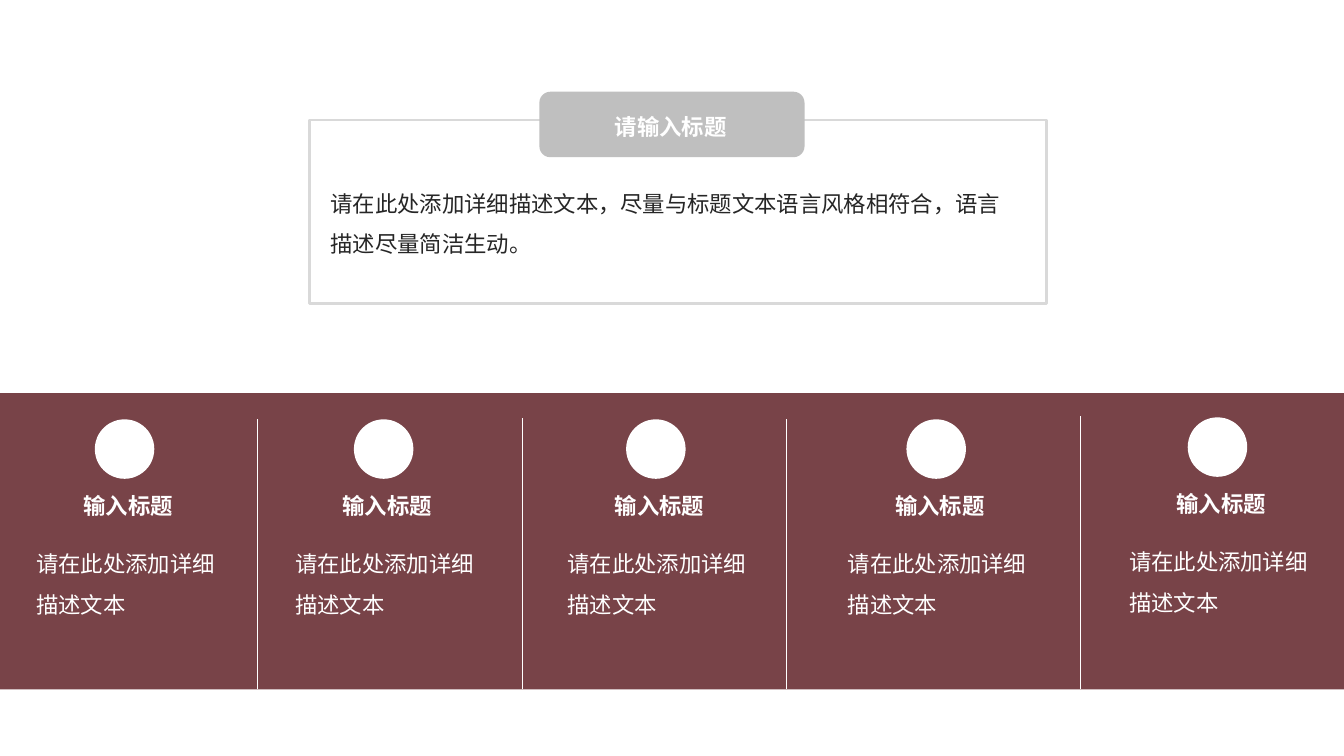
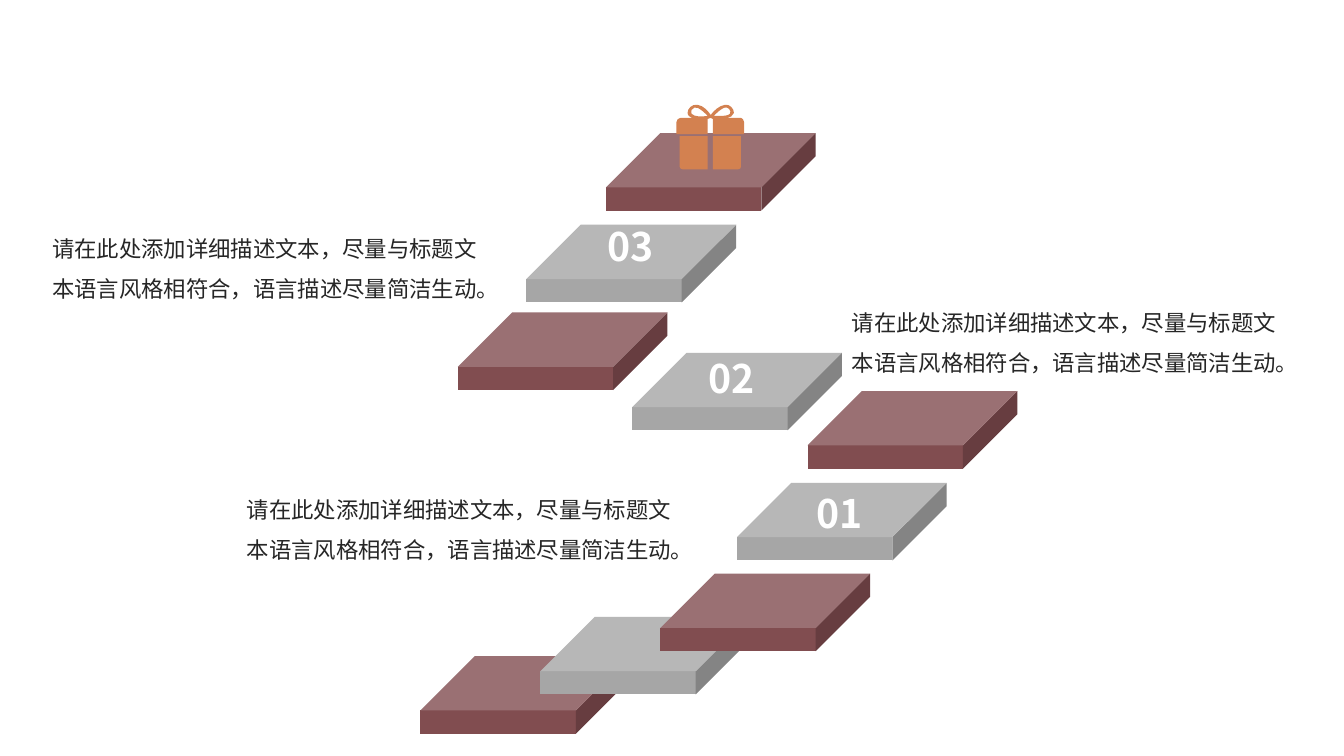
import pptx
import pptx.util
import pptx.dml.color
import pptx.enum.shapes
import pptx.enum.text
import pptx.oxml.ns
from lxml import etree

RGBColor = pptx.dml.color.RGBColor
SHAPE = pptx.enum.shapes.MSO_SHAPE
qn = pptx.oxml.ns.qn

# Shared look: 100 px to the inch
PX = 9144
SLIDE_SIZE = (1333, 750)
FONT = "Noto Sans CJK SC"
WHITE = RGBColor(0xFF, 0xFF, 0xFF)
DARK = RGBColor(0x26, 0x26, 0x26)
FRAME_GREY = RGBColor(0xD9, 0xD9, 0xD9)
TAB_GREY = RGBColor(0xBF, 0xBF, 0xBF)
STEP_GREY = RGBColor(0xA6, 0xA6, 0xA6)
STEP_RED = RGBColor(0x81, 0x4D, 0x50)
BAND_RED = RGBColor(0x78, 0x43, 0x48)
GIFT_ORANGE = RGBColor(0xD3, 0x81, 0x50)

BODY = {"size": pptx.util.Pt(16), "name": FONT}
HEADING = {**BODY, "bold": True}
NUMBER = {**HEADING, "size": pptx.util.Pt(28)}
BODY_SPACING = 1.5
BODY_HEIGHT = 86
HEADING_HEIGHT = 37

# Slide 1 content
DESCRIPTION = "请在此处添加详细描述文本，尽量与标题文本语言风格相符合，语言描述尽量简洁生动。"
FRAME_TITLE = "请输入标题"
COLUMN_TITLE = "输入标题"
COLUMN_TEXT = "请在此处添加详细描述文本"
FRAME = (307, 119, 731, 182)
FRAME_TAB = (535, 91, 263, 65)
BAND = (0, 390, 1333, 294)
COLUMNS = [(26, 416), (283, 416), (553, 416), (831, 416), (1110, 414)]  # left, top
DIVIDERS = [(255, 416), (518, 415), (780, 416), (1072, 413)]  # x, top

# Slide 2 content: steps from the bottom up, colours alternate
STEP_SIZE = (208, 77)
STEP_DEPTH = 0.7
STEPS = [(417, 651), (536, 612), (655, 569), (731, 479), (801, 388),
         (627, 350), (454, 310), (522, 223), (601, 132)]
NOTES = [(42, 215), (835, 288), (235, 474)]
NUMBERS = [("03", 593, 216), ("02", 693, 347), ("01", 800, 481)]

# Gift outline: each contour is a start point, then lines (2 values) or curves (6)
GIFT = [
    # lid and bow
    [(707, 133), (707, 118), (706, 118, 706, 117, 705, 117),
     (704, 118, 703, 118, 702, 118), (702, 133), (671, 133), (671, 121),
     (671, 119, 673, 117, 675, 117), (689, 117),
     (685, 117, 682, 115, 682, 112), (682, 108, 686, 103, 692, 104),
     (698, 105, 702, 110, 705, 114), (708, 110, 713, 105, 719, 104),
     (724, 103, 728, 108, 728, 112), (727, 115, 724, 117, 721, 117),
     (735, 117), (736, 117, 738, 119, 738, 121), (738, 133)],
    # loops of the bow
    [(692, 107), (689, 106, 688, 107, 686, 109), (686, 110, 685, 112, 686, 113),
     (689, 116, 696, 116, 702, 115), (699, 112, 696, 109, 692, 107)],
    [(724, 113), (726, 110, 722, 105, 718, 107), (714, 109, 711, 112, 708, 115),
     (710, 115, 713, 115, 715, 115), (717, 115, 722, 115, 724, 113)],
    # halves of the box
    [(702, 168), (677, 168), (676, 168, 674, 167, 674, 165), (674, 135), (702, 135)],
    [(735, 165), (735, 167, 734, 168, 732, 168), (707, 168), (707, 135), (735, 135)],
]


def emu(*lengths):
    return [length * PX for length in lengths]


def paint(shape, fill, line=None):
    shape.shadow.inherit = False
    if fill is None:
        shape.fill.background()
    else:
        shape.fill.solid()
        shape.fill.fore_color.rgb = fill
    if line is None:
        shape.line.fill.background()
    else:
        shape.line.color.rgb = line
        shape.line.width = pptx.util.Pt(2)


def add_block(slide, kind, box, fill=None, line=None):
    shape = slide.shapes.add_shape(kind, *emu(*box))
    paint(shape, fill, line)
    return shape


def add_text(slide, text, box, style, colour, spacing=None):
    frame = slide.shapes.add_textbox(*emu(*box)).text_frame
    frame.word_wrap = True
    frame.auto_size = pptx.enum.text.MSO_AUTO_SIZE.SHAPE_TO_FIT_TEXT
    paragraph = frame.paragraphs[0]
    paragraph.line_spacing = spacing
    run = paragraph.add_run()
    run.text = text
    for attribute, value in style.items():
        setattr(run.font, attribute, value)
    run.font.color.rgb = colour
    east_asian = etree.SubElement(run._r.get_or_add_rPr(), qn("a:ea"))
    east_asian.set("typeface", FONT)


def add_divider(slide, x, top, bottom):
    line = slide.shapes.add_connector(
        pptx.enum.shapes.MSO_CONNECTOR.STRAIGHT, *emu(x, top, x, bottom))
    line.line.color.rgb = WHITE
    line.line.width = pptx.util.Pt(0.5)
    etree.SubElement(line._element.spPr, qn("a:effectLst"))


def add_gift(slide):
    # Straight outline through the end points
    builder = slide.shapes.build_freeform(*emu(*GIFT[0][0]), scale=1.0)
    for index, contour in enumerate(GIFT):
        if index:
            builder.move_to(*emu(*contour[0]))
        ends = [tuple(emu(*segment[-2:])) for segment in contour[1:]]
        builder.add_line_segments(ends, close=True)
    gift = builder.convert_to_shape()
    paint(gift, GIFT_ORANGE)

    # Bend the segments that are curves
    outline = gift._element.spPr.find(".//" + qn("a:path"))
    nodes = [node for node in outline if node.tag != qn("a:close")]
    segments = [segment for contour in GIFT for segment in contour]
    for node, segment in zip(nodes, segments):
        if len(segment) == 6:
            curve = etree.Element(qn("a:cubicBezTo"))
            for x, y in zip(emu(*segment[::2]), emu(*segment[1::2])):
                point = etree.SubElement(curve, qn("a:pt"))
                point.set("x", str(x - gift.left))
                point.set("y", str(y - gift.top))
            outline.replace(node, curve)


def build_columns_slide(slide):
    # Framed description with its tab
    add_block(slide, SHAPE.RECTANGLE, FRAME, line=FRAME_GREY)
    add_block(slide, SHAPE.ROUNDED_RECTANGLE, FRAME_TAB, TAB_GREY)
    add_text(slide, DESCRIPTION, (318, 170, 697, BODY_HEIGHT), BODY, DARK, BODY_SPACING)
    add_text(slide, FRAME_TITLE, (600, 107, 134, HEADING_HEIGHT), HEADING, WHITE)

    # Band with five columns
    add_block(slide, SHAPE.RECTANGLE, BAND, BAND_RED)
    for x, top in DIVIDERS:
        add_divider(slide, x, top, BAND[1] + BAND[3])
    for left, top in COLUMNS:
        add_block(slide, SHAPE.OVAL, (left + 68, top, 59, 59), WHITE)
        add_text(slide, COLUMN_TITLE, (left + 47, top + 67, 113, HEADING_HEIGHT),
                 HEADING, WHITE)
        add_text(slide, COLUMN_TEXT, (left, top + 112, 207, BODY_HEIGHT),
                 BODY, WHITE, BODY_SPACING)


def build_steps_slide(slide):
    # Staircase
    for index, position in enumerate(STEPS):
        fill = STEP_GREY if index % 2 else STEP_RED
        cube = add_block(slide, SHAPE.CUBE, (*position, *STEP_SIZE), fill)
        cube.adjustments[0] = STEP_DEPTH
    add_gift(slide)

    # Descriptions and step numbers
    for left, top in NOTES:
        add_text(slide, DESCRIPTION, (left, top, 456, BODY_HEIGHT),
                 BODY, DARK, BODY_SPACING)
    for number, left, top in NUMBERS:
        add_text(slide, number, (left, top, 78, 57), NUMBER, WHITE)


def main():
    presentation = pptx.Presentation()
    presentation.slide_width, presentation.slide_height = emu(*SLIDE_SIZE)
    for build in (build_columns_slide, build_steps_slide):
        build(presentation.slides.add_slide(presentation.slide_layouts[6]))
    presentation.save("out.pptx")


if __name__ == "__main__":
    main()
